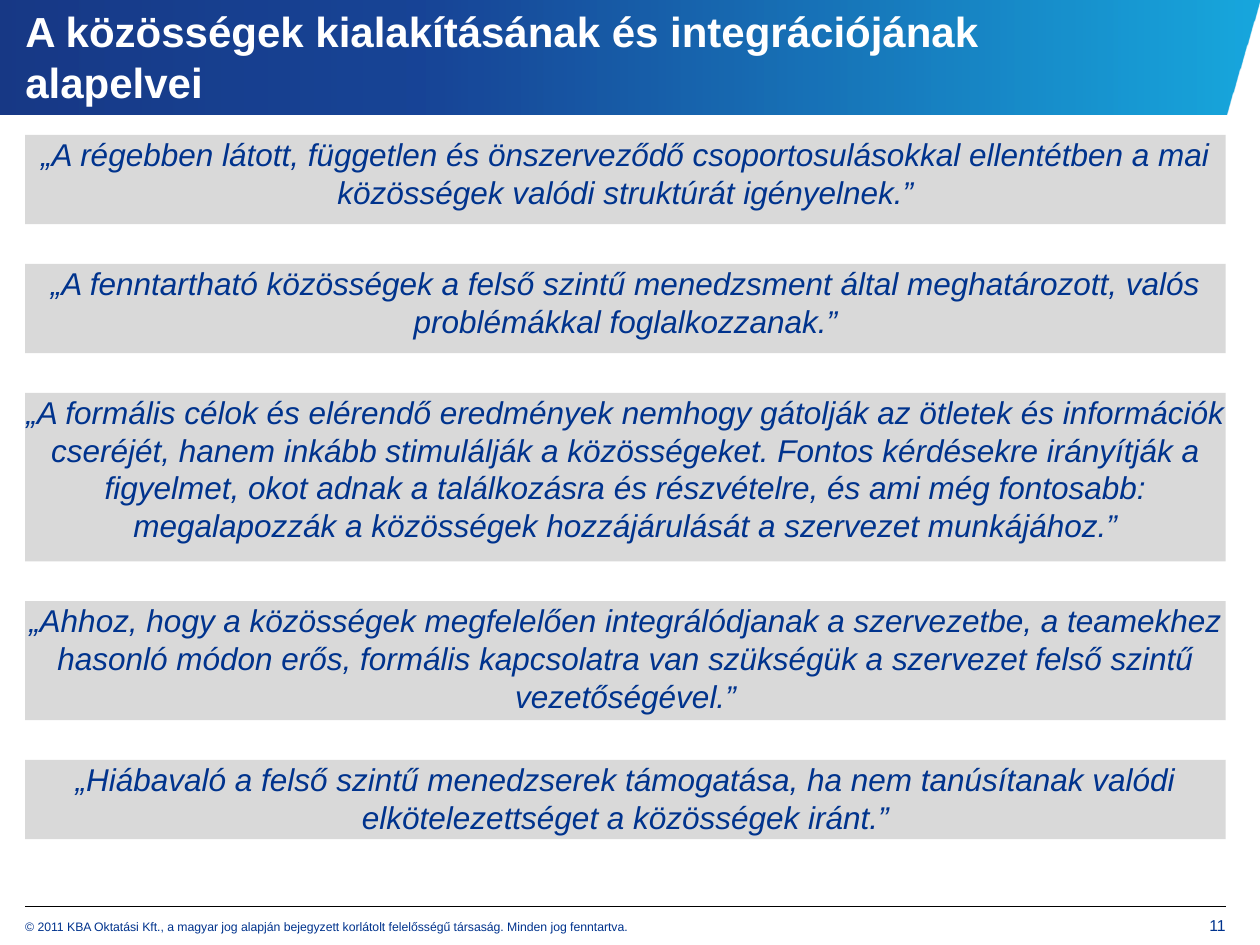
import pptx
import pptx.dml.color
import pptx.enum.shapes
import pptx.enum.text
import pptx.oxml
import pptx.oxml.ns
import pptx.util
from lxml import etree

Cm = pptx.util.Cm
Pt = pptx.util.Pt
ALIGN = pptx.enum.text.PP_ALIGN
ANCHOR = pptx.enum.text.MSO_ANCHOR
qn = pptx.oxml.ns.qn

COLORS = {
    "navy": "00257A",
    "blue": "00338D",
    "cyan": "009FDA",
    "panel": "D9D9D9",
    "white": "FFFFFF",
    "black": "000000",
}
FONT = "Arial"

# Common measures in centimetres
LEFT, RIGHT = 0.51, 24.71
WIDTH = RIGHT - LEFT
FIRST_TOP, GAP = 2.72, 0.8

TITLE = "A közösségek kialakításának és integrációjának alapelvei"
# Each quote with the height of its panel
QUOTES = [
    ("„A régebben látott, független és önszerveződő csoportosulásokkal "
     "ellentétben a mai közösségek valódi struktúrát igényelnek.”", 1.8),
    ("„A fenntartható közösségek a felső szintű menedzsment által "
     "meghatározott, valós problémákkal foglalkozzanak.”", 1.8),
    ("„A formális célok és elérendő eredmények nemhogy gátolják az ötletek "
     "és információk cseréjét, hanem inkább stimulálják a közösségeket. "
     "Fontos kérdésekre irányítják a figyelmet, okot adnak a találkozásra "
     "és részvételre, és ami még fontosabb: megalapozzák a közösségek "
     "hozzájárulását a szervezet munkájához.”", 3.4),
    ("„Ahhoz, hogy a közösségek megfelelően integrálódjanak a szervezetbe, "
     "a teamekhez hasonló módon erős, formális kapcsolatra van szükségük a "
     "szervezet felső szintű vezetőségével.”", 2.4),
    ("„Hiábavaló a felső szintű menedzserek támogatása, ha nem tanúsítanak "
     "valódi elkötelezettséget a közösségek iránt.”", 1.6),
]
COPYRIGHT = ("© 2011 KBA Oktatási Kft., a magyar jog alapján bejegyzett "
             "korlátolt felelősségű társaság. Minden jog fenntartva.")


def rgb(name):
    return pptx.dml.color.RGBColor.from_string(COLORS[name])


def write(sp, text, size, color="blue", align=ALIGN.LEFT, anchor=ANCHOR.TOP,
          left=0, top=0, bold=False, italic=False):
    tf = sp.text_frame
    tf.word_wrap = True
    tf.auto_size = pptx.enum.text.MSO_AUTO_SIZE.NONE
    tf.vertical_anchor = anchor
    tf.margin_left, tf.margin_top = Cm(left), Cm(top)
    tf.margin_right = tf.margin_bottom = 0
    p = tf.paragraphs[0]
    p.alignment = align
    r = p.add_run()
    r.text = text
    r.font.name, r.font.size = FONT, Pt(size)
    r.font.bold, r.font.italic = bold, italic
    r.font.color.rgb = rgb(color)


def add_band(slide):
    builder = slide.shapes.build_freeform(0, 0)
    builder.add_line_segments(
        [(0, Cm(2.31)), (Cm(24.71), Cm(2.31)), (Cm(25.4), 0)], close=True)
    sp = builder.convert_to_shape()
    sp.shadow.inherit = False
    sp.line.fill.background()
    sp.fill.gradient()
    sp.fill.gradient_angle = 0
    # Three slightly transparent stops
    stops = sp.element.spPr.find(qn("a:gradFill")).find(qn("a:gsLst"))
    for gs in list(stops):
        stops.remove(gs)
    for pos, name in ((0, "navy"), (35, "blue"), (100, "cyan")):
        gs = etree.SubElement(stops, qn("a:gs"), pos=str(pos * 1000))
        clr = etree.SubElement(gs, qn("a:srgbClr"), val=COLORS[name])
        etree.SubElement(clr, qn("a:alpha"), val="90000")


def add_title(slide):
    sp = slide.shapes.title
    sp.left, sp.top, sp.width, sp.height = Cm(LEFT), Cm(0.33), Cm(19.81), Cm(1.6)
    write(sp, TITLE, 24, "white", anchor=ANCHOR.MIDDLE, bold=True)
    # Bring the title in front of the band
    slide.shapes.element.append(sp.element)


def add_panel(slide, text, top, height):
    sp = slide.shapes.add_shape(pptx.enum.shapes.MSO_SHAPE.RECTANGLE,
                                Cm(LEFT), Cm(top), Cm(WIDTH), Cm(height))
    sp.shadow.inherit = False
    sp.fill.solid()
    sp.fill.fore_color.rgb = rgb("panel")
    sp.line.fill.background()
    write(sp, text, 18, align=ALIGN.CENTER, italic=True)


def add_rule(slide, y):
    line = slide.shapes.add_connector(pptx.enum.shapes.MSO_CONNECTOR.STRAIGHT,
                                      Cm(LEFT), Cm(y), Cm(RIGHT), Cm(y))
    line.line.color.rgb = rgb("black")
    line.line.width = Pt(0.25)
    etree.SubElement(line.element.spPr, qn("a:effectLst"))


def add_label(slide, text, box, size, **style):
    sp = slide.shapes.add_textbox(*(Cm(v) for v in box))
    write(sp, text, size, top=0.2, **style)


def main():
    prs = pptx.Presentation()
    prs.slide_width, prs.slide_height = Cm(25.4), Cm(19.05)
    slide = prs.slides.add_slide(prs.slide_layouts[5])

    # Header
    add_band(slide)
    add_title(slide)

    # Quotes, stacked with equal gaps
    top = FIRST_TOP
    for text, height in QUOTES:
        add_panel(slide, text, top, height)
        top += height + GAP

    # Footer
    add_rule(slide, 18.26)
    add_label(slide, COPYRIGHT, (LEFT, 18.34, 16.2, 0.51), 7)
    add_label(slide, "11", (23.31, 18.26, 1.4, 0.79), 9,
              align=ALIGN.RIGHT, left=0.2)

    prs.save("out.pptx")


if __name__ == "__main__":
    main()
